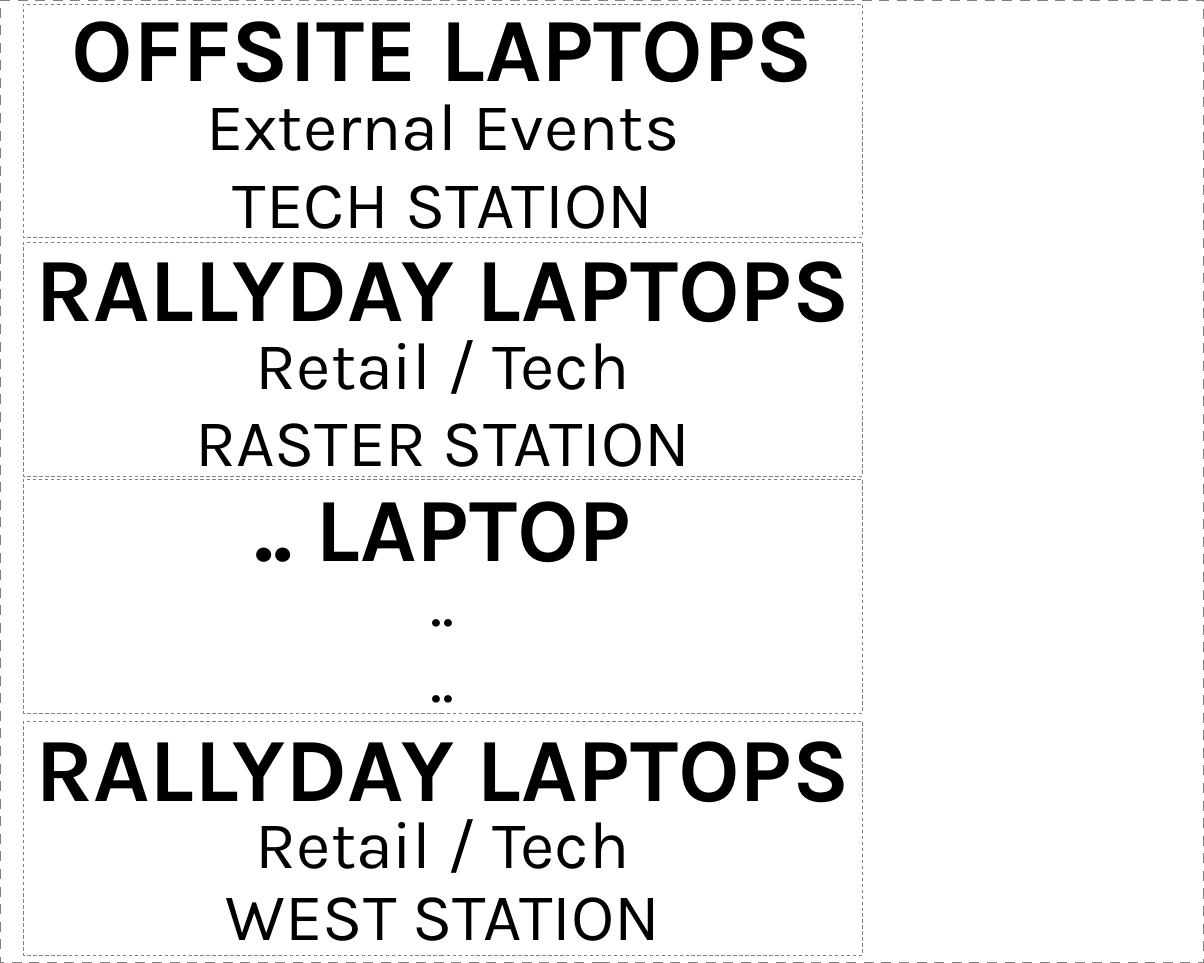
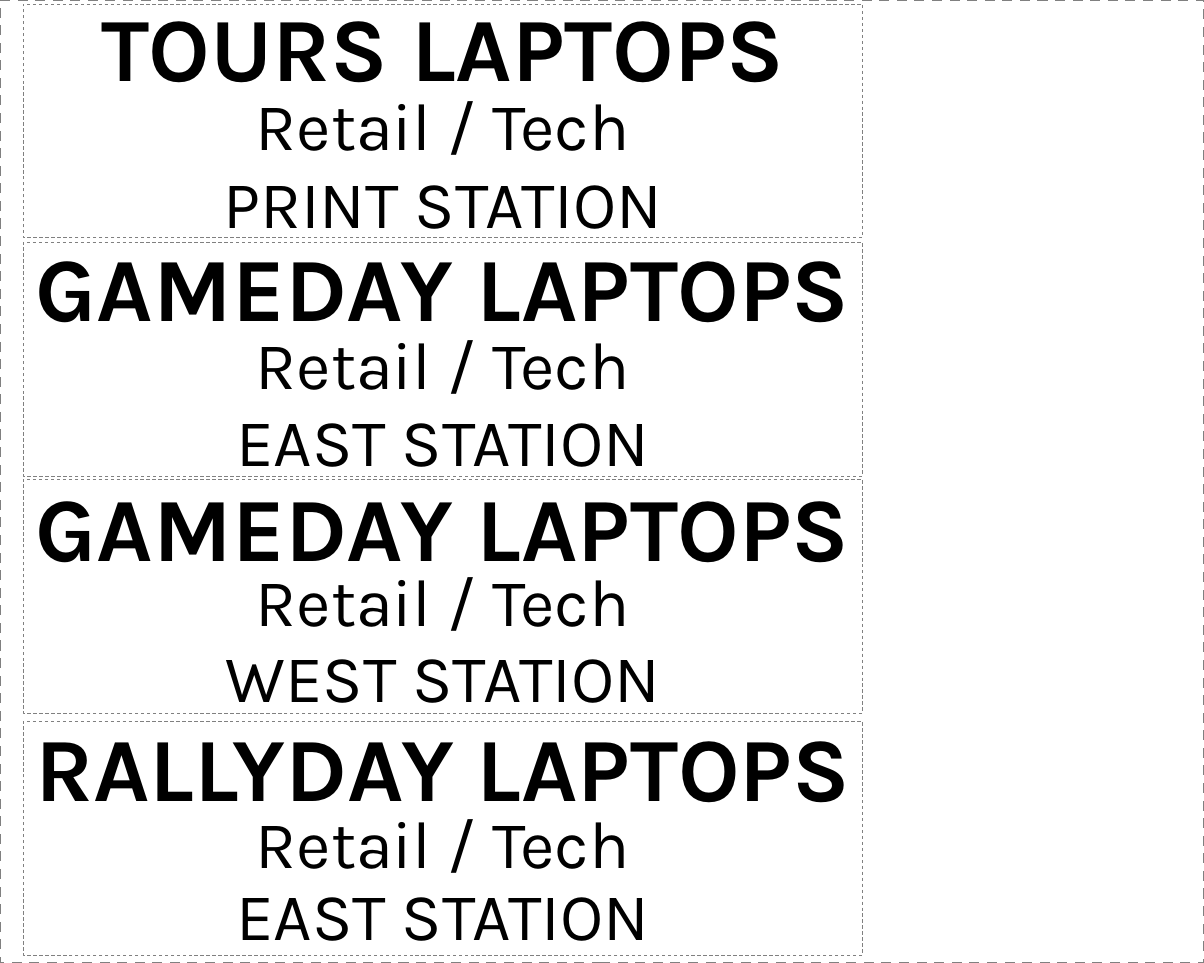
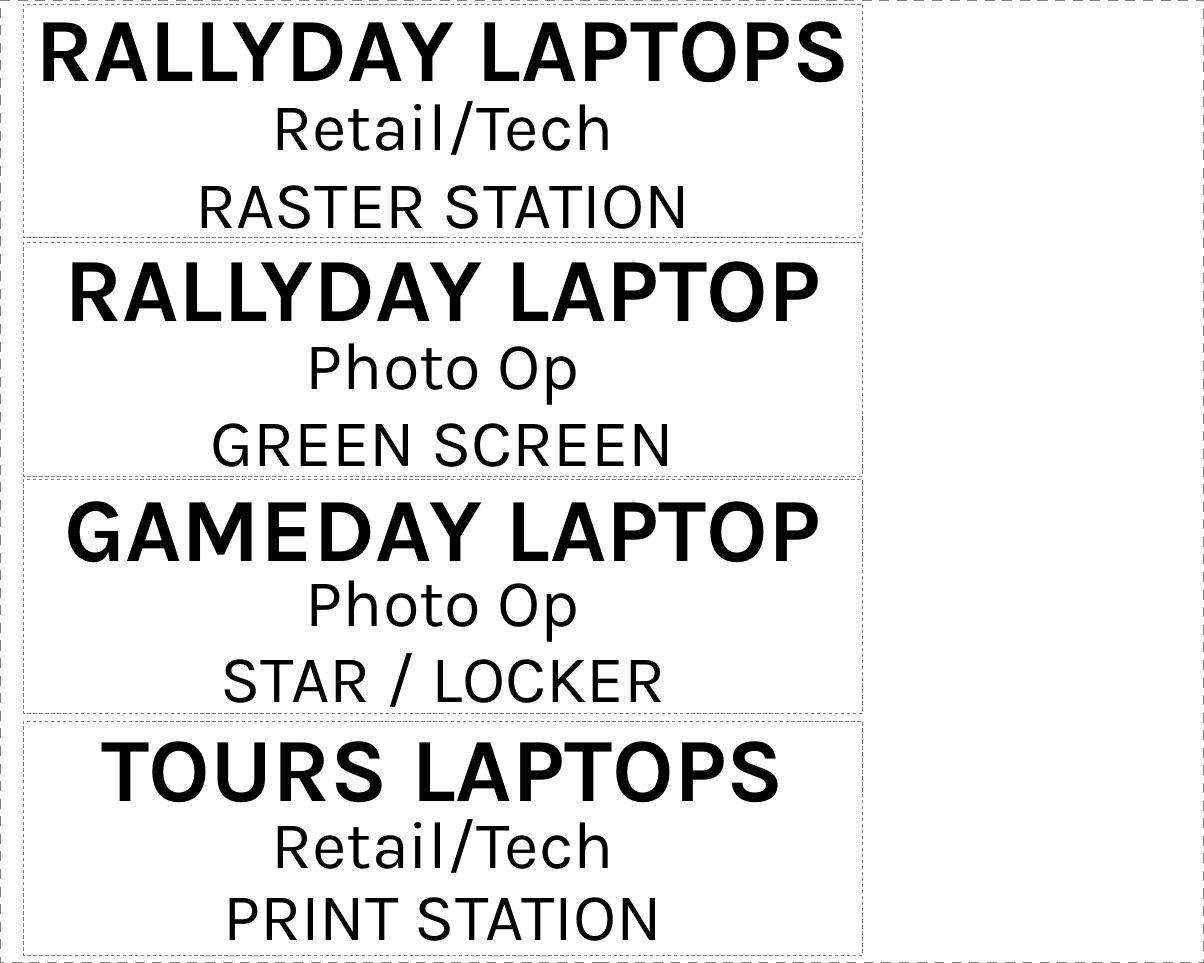
from dataclasses import dataclass

from pptx import Presentation
from pptx.dml.color import RGBColor
from pptx.enum.dml import MSO_LINE
from pptx.enum.shapes import MSO_SHAPE
from pptx.enum.text import MSO_ANCHOR, MSO_AUTO_SIZE, PP_ALIGN
from pptx.slide import Slide
from pptx.util import Pt

RECT = MSO_SHAPE.RECTANGLE
DASH = MSO_LINE.DASH
TOP, MIDDLE = MSO_ANCHOR.TOP, MSO_ANCHOR.MIDDLE
CENTER = PP_ALIGN.CENTER
FIXED = MSO_AUTO_SIZE.NONE

BLACK = RGBColor(0x00, 0x00, 0x00)
GRAY = RGBColor(0x80, 0x80, 0x80)
WHITE = RGBColor(0xFF, 0xFF, 0xFF)
FONT = "Karla"

# Lengths in points
PAGE_W, PAGE_H = 720, 576
MID_X = 264.8
FRAME_W, FRAME_H = 501.84, 139.68
HEAD_TOP, HEAD_STEP = -8.64, 143.52
HEAD_W, TEAM_W, TEXT_H = 286.56, 342.72, 64.8
TEAM_DROP = 44.28
HEAD_SIZE, BODY_SIZE = 54, 40


@dataclass(frozen=True)
class Row:
    """Where one label sits: its frame, and the box of its place line."""
    top: float
    place_top: float
    place_w: float
    place_h: float


@dataclass(frozen=True)
class Label:
    head: str
    team: str
    place: str


ROWS = [
    Row(2.52, 102.24, 286.56, 36.72),
    Row(145.08, 244.8, 286.56, 36.72),
    Row(286.92, 383.76, 384.48, 40.32),
    Row(431.64, 529.92, 347.04, 33.12),
]

SHEETS = [
    [
        Label("OFFSITE LAPTOPS", "External Events", "TECH STATION"),
        Label("RALLYDAY LAPTOPS", "Retail / Tech", "RASTER STATION"),
        Label(".. LAPTOP", "..", ".."),
        Label("RALLYDAY LAPTOPS", "Retail / Tech", "WEST STATION"),
    ],
    [
        Label("TOURS LAPTOPS", "Retail / Tech", "PRINT STATION"),
        Label("GAMEDAY LAPTOPS", "Retail / Tech", "EAST STATION"),
        Label("GAMEDAY LAPTOPS", "Retail / Tech", "WEST STATION"),
        Label("RALLYDAY LAPTOPS", "Retail / Tech", "EAST STATION"),
    ],
    [
        Label("RALLYDAY LAPTOPS", "Retail/Tech", "RASTER STATION"),
        Label("RALLYDAY LAPTOP", "Photo Op", "GREEN SCREEN"),
        Label("GAMEDAY LAPTOP", "Photo Op", "STAR / LOCKER"),
        Label("TOURS LAPTOPS", "Retail/Tech", "PRINT STATION"),
    ],
]


def add_frame(slide: Slide, left: float, top: float, width: float,
              height: float, line: float, fill: RGBColor | None = None) -> None:
    """Draw a dashed cutting frame."""
    box = slide.shapes.add_shape(RECT, Pt(left), Pt(top), Pt(width), Pt(height))
    box.shadow.inherit = False
    if fill is None:
        box.fill.background()
    else:
        box.fill.solid()
        box.fill.fore_color.rgb = fill
    box.line.color.rgb = GRAY
    box.line.width = Pt(line)
    box.line.dash_style = DASH


def add_text(slide: Slide, text: str, top: float, width: float, height: float,
             size: float = BODY_SIZE, bold: bool = False,
             anchor: MSO_ANCHOR = TOP) -> None:
    """Write one line, centred on the label column."""
    box = slide.shapes.add_textbox(
        Pt(MID_X - width / 2), Pt(top), Pt(width), Pt(height))
    frame = box.text_frame
    frame.text = text
    frame.word_wrap = False
    frame.auto_size = FIXED
    frame.vertical_anchor = anchor
    line = frame.paragraphs[0]
    line.alignment = CENTER
    font = line.runs[0].font
    font.name = FONT
    font.size = Pt(size)
    font.bold = bold
    font.color.rgb = BLACK


def add_label(slide: Slide, label: Label, row: Row, index: int) -> None:
    """Draw one label: frame, heading, team and place."""
    add_frame(slide, MID_X - FRAME_W / 2, row.top, FRAME_W, FRAME_H, 0.5)
    add_text(slide, label.head, HEAD_TOP + index * HEAD_STEP, HEAD_W, TEXT_H,
             HEAD_SIZE, bold=True)
    add_text(slide, label.team, row.top + TEAM_DROP, TEAM_W, TEXT_H)
    add_text(slide, label.place, row.place_top, row.place_w, row.place_h,
             anchor=MIDDLE)


def main() -> None:
    deck = Presentation()
    deck.slide_width, deck.slide_height = Pt(PAGE_W), Pt(PAGE_H)
    blank = deck.slide_layouts[6]
    for labels in SHEETS:
        slide = deck.slides.add_slide(blank)
        # Sheet edge
        add_frame(slide, 0, 0, PAGE_W, PAGE_H, 1.5, WHITE)
        # Labels, top to bottom
        for index, (label, row) in enumerate(zip(labels, ROWS)):
            add_label(slide, label, row, index)
    deck.save("out.pptx")


if __name__ == "__main__":
    main()
